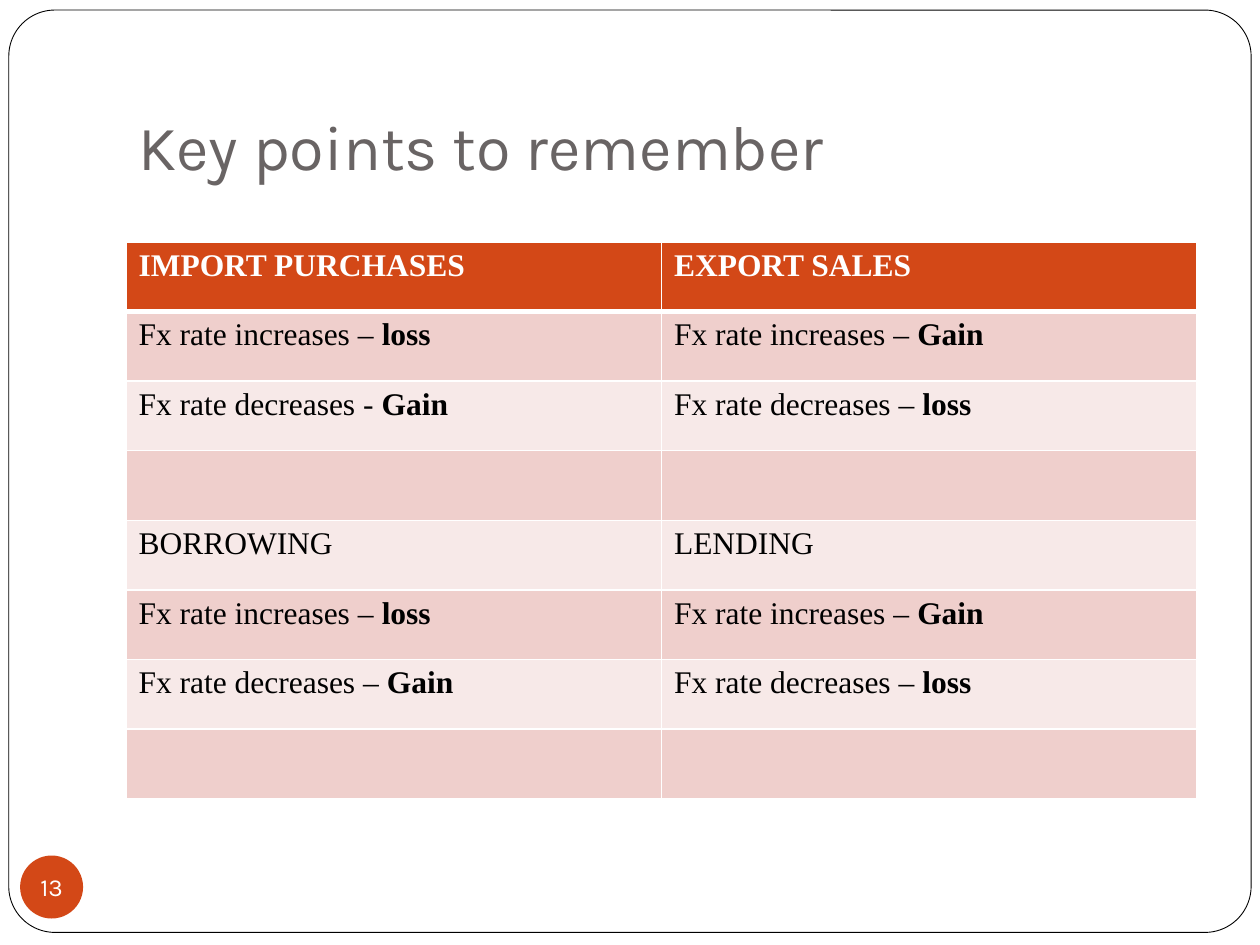
import pptx
import pptx.util
import pptx.dml.color
import pptx.enum.shapes
import pptx.enum.text
import pptx.oxml.ns
from lxml import etree

TITLE = "Key points to remember"
PAGE = "13"
# Each cell is (plain text, bold text)
ROWS = [
    [("", "IMPORT PURCHASES"), ("", "EXPORT SALES")],
    [("Fx rate increases – ", "loss"), ("Fx rate increases – ", "Gain")],
    [("Fx rate decreases - ", "Gain"), ("Fx rate decreases – ", "loss")],
    [("", ""), ("", "")],
    [("BORROWING", ""), ("LENDING", "")],
    [("Fx rate increases – ", "loss"), ("Fx rate increases – ", "Gain")],
    [("Fx rate decreases – ", "Gain"), ("Fx rate decreases – ", "loss")],
    [("", ""), ("", "")],
]
THEME = {
    "white": "FFFFFF", "black": "000000", "gray": "696464",
    "accent": "D34817", "bands": ("F7E9E8", "EFCFCC"),
    "head": "Karla", "body": "Times New Roman",
    "title": 36, "cell": 18, "page": 14,
    "frame": 0.5, "rule": 1, "thick": 3,
}
WIDE, HIGH = 10, 7.5
LEFT, SPAN = 0.1 * WIDE, 0.85 * WIDE
TOP, DEPTH = 1.92, 4.42

Inch, Pt = pptx.util.Inches, pptx.util.Pt
SHAPE = pptx.enum.shapes.MSO_SHAPE
ANCHOR = pptx.enum.text.MSO_ANCHOR


def color(code):
    return pptx.dml.color.RGBColor.from_string(code)


def paint(item, code):
    item.fill.solid()
    item.fill.fore_color.rgb = color(code)


def style(para, face, size, code):
    para.font.name = face
    para.font.size = Pt(size)
    para.font.color.rgb = color(code)


def inset(frame, *sides):
    """Set the left, top, right and bottom margins in inches."""
    (frame.margin_left, frame.margin_top,
     frame.margin_right, frame.margin_bottom) = map(Inch, sides)


def add_shape(slide, kind, box, fill):
    shape = slide.shapes.add_shape(kind, *map(Inch, box))
    shape.shadow.inherit = False
    paint(shape, fill)
    return shape


def rule(cell, widths):
    """Draw white borders, given widths for left, right, top and bottom."""
    props = cell._tc.get_or_add_tcPr()
    qn = pptx.oxml.ns.qn
    for spot, (side, width) in enumerate(zip("LRTB", widths)):
        line = etree.Element(qn(f"a:ln{side}"), w=str(int(Pt(width))))
        fill = etree.SubElement(line, qn("a:solidFill"))
        etree.SubElement(fill, qn("a:srgbClr"), val=THEME["white"])
        props.insert(spot, line)


def fill_cell(cell, row, plain, bold):
    head = row == 0
    paint(cell, THEME["accent"] if head else THEME["bands"][row % 2])
    para = cell.text_frame.paragraphs[0]
    style(para, THEME["body"], THEME["cell"],
          THEME["white"] if head else THEME["black"])
    for text, heavy in ((plain, False), (bold, True)):
        if text:
            run = para.add_run()
            run.text = text
            run.font.bold = heavy
    thin, thick = THEME["rule"], THEME["thick"]
    rule(cell, (thin, thin, thick if row == 1 else thin,
                thick if head else thin))


def add_grid(slide):
    grid = slide.shapes.add_table(
        len(ROWS), len(ROWS[0]), *map(Inch, (LEFT, TOP, SPAN, DEPTH))).table
    for row, cells in enumerate(ROWS):
        for col, (plain, bold) in enumerate(cells):
            fill_cell(grid.cell(row, col), row, plain, bold)


def add_title(slide):
    frame = slide.shapes.add_textbox(
        *map(Inch, (LEFT, 0.3, SPAN, 1.25))).text_frame
    frame.word_wrap = True
    frame.vertical_anchor = ANCHOR.BOTTOM
    inset(frame, 0.1, 0.05, 0.1, 0.1)
    frame.text = TITLE
    style(frame.paragraphs[0], THEME["head"], THEME["title"], THEME["gray"])


def add_page(slide):
    badge = add_shape(slide, SHAPE.OVAL, (0.16, 6.79, 0.5, 0.5),
                      THEME["accent"])
    badge.line.fill.background()
    frame = badge.text_frame
    frame.word_wrap = False
    frame.vertical_anchor = ANCHOR.MIDDLE
    inset(frame, 0, 0, 0, 0)
    frame.text = PAGE
    para = frame.paragraphs[0]
    para.alignment = pptx.enum.text.PP_ALIGN.CENTER
    style(para, THEME["head"], THEME["page"], THEME["white"])


def main():
    deck = pptx.Presentation()
    deck.slide_width, deck.slide_height = Inch(WIDE), Inch(HIGH)
    slide = deck.slides.add_slide(deck.slide_layouts[6])
    border = add_shape(slide, SHAPE.ROUNDED_RECTANGLE,
                       (0.07, 0.08, 9.86, 7.32), THEME["white"])
    border.adjustments[0] = 0.05
    border.line.color.rgb = color(THEME["black"])
    border.line.width = Pt(THEME["frame"])
    add_title(slide)
    add_grid(slide)
    add_page(slide)
    deck.save("out.pptx")


if __name__ == "__main__":
    main()
